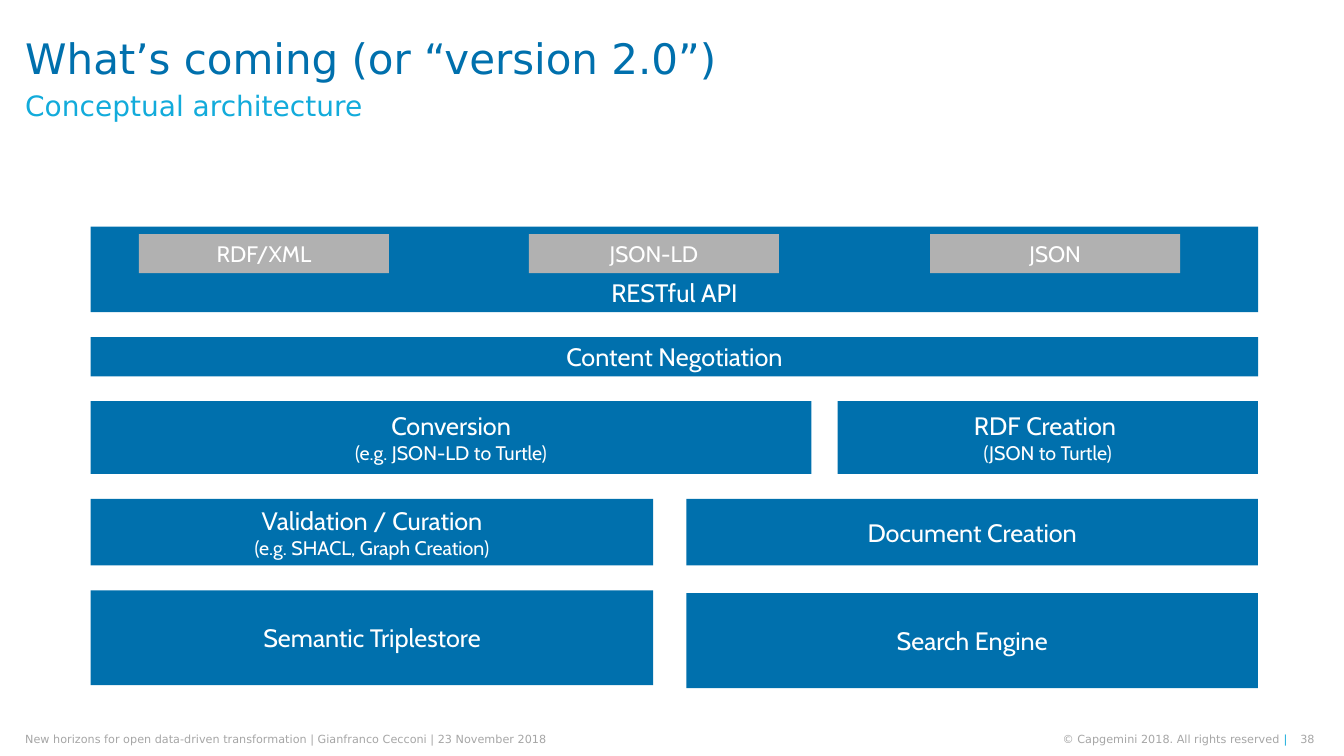
from pptx import Presentation
from pptx.dml.color import RGBColor
from pptx.enum.shapes import MSO_SHAPE
from pptx.enum.text import MSO_ANCHOR, PP_ALIGN
from pptx.util import Pt

BLUE = RGBColor(0x00, 0x70, 0xAD)
CYAN = RGBColor(0x12, 0xAB, 0xDB)
GREY = RGBColor(0xB1, 0xB1, 0xB1)
FOOTER_GREY = RGBColor(0xA6, 0xA6, 0xA6)
WHITE = RGBColor(0xFF, 0xFF, 0xFF)
HEAD_FONT, BOX_FONT = "DejaVu Sans", "Cabin"

# Text runs (text, size, colour), then left, top, width, height, alignment, anchor, line spacing
LABELS = [
    ([("What’s coming (or “version 2.0”)", 30, BLUE)],
     18, 0, 876, 87, PP_ALIGN.LEFT, MSO_ANCHOR.MIDDLE, 0.9),
    ([("Conceptual architecture", 20, CYAN)],
     18, 66.2, 922, 39.6, PP_ALIGN.LEFT, MSO_ANCHOR.TOP, 0.9),
    ([("New horizons for open data-driven transformation | Gianfranco Cecconi | 23 November 2018",
       8, FOOTER_GREY)],
     18, 523.4, 468, 9.4, PP_ALIGN.LEFT, MSO_ANCHOR.MIDDLE, 1),
    ([("© Capgemini 2018. All rights reserved ", 8, FOOTER_GREY), ("|", 8, CYAN)],
     710, 523.4, 209.5, 9.4, PP_ALIGN.RIGHT, MSO_ANCHOR.MIDDLE, 1),
    ([("38", 8, FOOTER_GREY)],
     925, 523.4, 14, 9.4, PP_ALIGN.RIGHT, MSO_ANCHOR.MIDDLE, 1),
]

# Layers from top to bottom: height, gap between columns, and
# boxes as (lines, width, drop); a width of None runs to the right edge
LAYERS = [
    (61.2, 0, [(["RESTful API"], None, 0)]),
    (28, 0, [(["Content Negotiation"], None, 0)]),
    (52, 18.7, [(["Conversion", "(e.g. JSON-LD to Turtle)"], 514.8, 0),
                (["RDF Creation ", "(JSON to Turtle)"], None, 0)]),
    (47.5, 23.7, [(["Validation / Curation", "(e.g. SHACL, Graph Creation)"], 401.8, 0),
                  (["Document Creation"], None, 0)]),
    (67.8, 23.7, [(["Semantic Triplestore"], 401.8, 0),
                  (["Search Engine"], None, 2)]),
]
STACK_LEFT, STACK_RIGHT, STACK_TOP, LAYER_GAP = 64.8, 898.6, 161.8, 17.8
LINE_SIZES = (18, 14)

FORMATS = [("RDF/XML", 99.2), ("JSON-LD", 377.8), ("JSON", 664.4)]
FORMAT_TOP, FORMAT_WIDTH, FORMAT_HEIGHT = 167.2, 178.6, 28


def style_run(r, font, size, color):
    r.font.name = font
    r.font.size = Pt(size)
    r.font.color.rgb = color


def add_label(s, runs, left, top, width, height, align, anchor, spacing):
    tf = s.shapes.add_textbox(Pt(left), Pt(top), Pt(width), Pt(height)).text_frame
    tf.word_wrap = True
    tf.margin_left = tf.margin_right = tf.margin_top = tf.margin_bottom = 0
    tf.vertical_anchor = anchor
    p = tf.paragraphs[0]
    p.alignment = align
    p.line_spacing = spacing
    for text, size, color in runs:
        r = p.add_run()
        r.text = text
        style_run(r, HEAD_FONT, size, color)


def add_box(s, lines, sizes, left, top, width, height, fill, anchor=MSO_ANCHOR.MIDDLE):
    """Add a filled rectangle whose lines share one centred paragraph."""
    sp = s.shapes.add_shape(MSO_SHAPE.RECTANGLE, Pt(left), Pt(top), Pt(width), Pt(height))
    sp.shadow.inherit = False
    sp.fill.solid()
    sp.fill.fore_color.rgb = fill
    sp.line.fill.background()
    tf = sp.text_frame
    tf.word_wrap = True
    tf.vertical_anchor = anchor
    p = tf.paragraphs[0]
    p.text = "\v".join(lines)
    p.alignment = PP_ALIGN.CENTER
    for r, size in zip(p.runs, sizes):
        style_run(r, BOX_FONT, size, WHITE)


def main():
    prs = Presentation()
    prs.slide_width, prs.slide_height = Pt(960), Pt(540)
    s = prs.slides.add_slide(prs.slide_layouts[6])

    for label in LABELS:
        add_label(s, *label)

    top = STACK_TOP
    for i, (height, column_gap, boxes) in enumerate(LAYERS):
        anchor = MSO_ANCHOR.BOTTOM if i == 0 else MSO_ANCHOR.MIDDLE
        left = STACK_LEFT
        for lines, width, drop in boxes:
            width = width or STACK_RIGHT - left
            add_box(s, lines, LINE_SIZES, left, top + drop, width, height, BLUE, anchor)
            left += width + column_gap
        top += height + LAYER_GAP

    for name, left in FORMATS:
        add_box(s, [name], [16], left, FORMAT_TOP, FORMAT_WIDTH, FORMAT_HEIGHT, GREY)

    prs.save("out.pptx")


if __name__ == "__main__":
    main()
